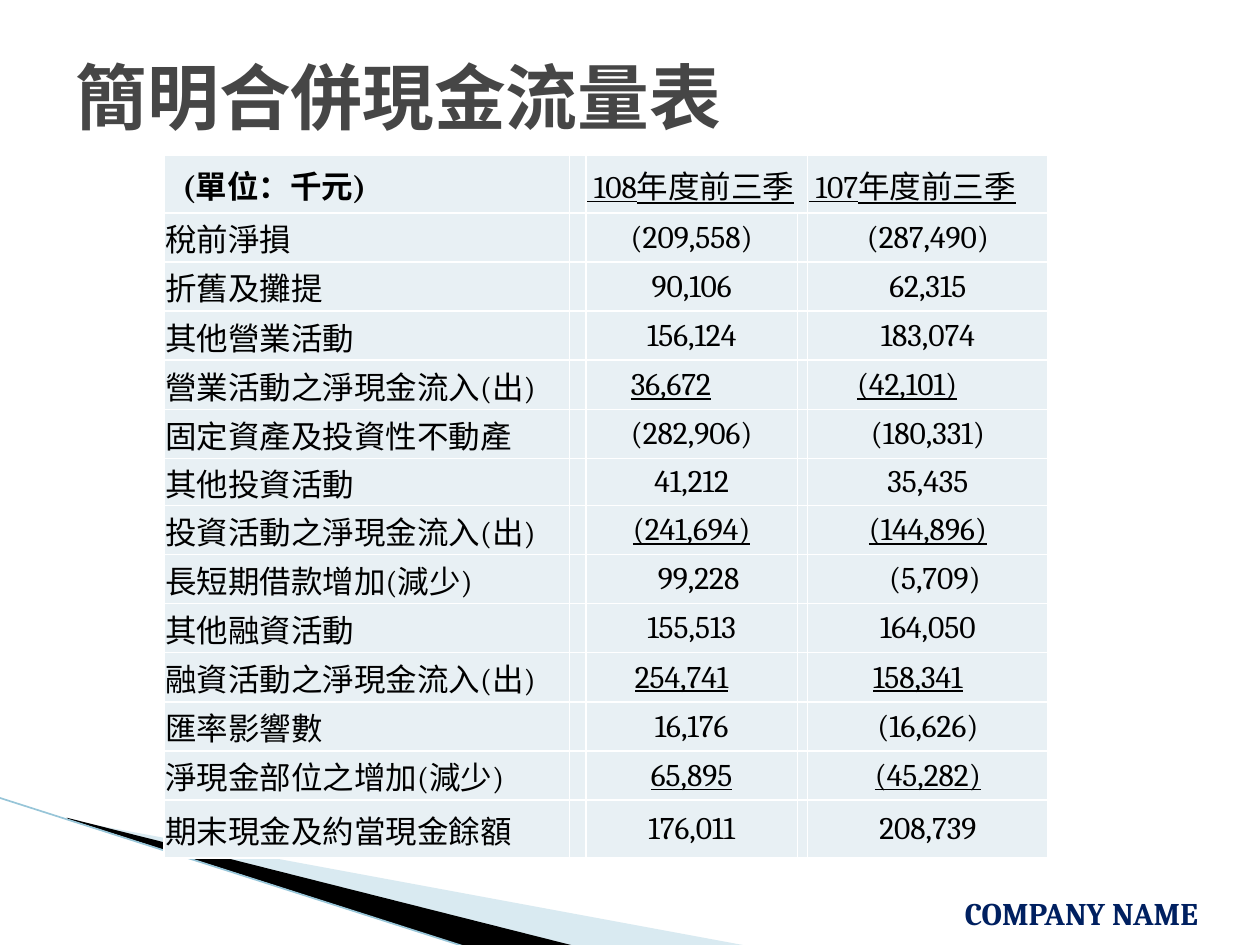
from dataclasses import dataclass
from lxml.etree import SubElement
from pptx import Presentation
from pptx.dml.color import RGBColor as RGB
from pptx.enum.shapes import MSO_CONNECTOR as Link
from pptx.enum.text import MSO_ANCHOR as Anchor, MSO_AUTO_SIZE as Fit, PP_ALIGN as Align
from pptx.oxml.ns import qn
from pptx.util import Inches, Pt


@dataclass(frozen=True)
class Theme:
    serif: str = "Cambria"
    sans: str = "Noto Sans CJK SC"
    big: int = 41
    text: int = 18
    ink: str = "000000"
    head: str = "464646"
    navy: str = "002060"
    cell: str = "E8F0F4"
    pale: str = "A0CBDC"
    edge: str = "97C5D8"


THEME = Theme()
HEADS = "(單位：千元)", " 108年度前三季", " 107年度前三季"
ROWS = [
    ("稅前淨損", "(209,558)", "(287,490)"),
    ("折舊及攤提", "90,106", "62,315"),
    ("其他營業活動", "156,124", "183,074"),
    ("營業活動之淨現金流入(出)", "36,672", "(42,101)"),
    ("固定資產及投資性不動產", "(282,906)", "(180,331)"),
    ("其他投資活動", "41,212", "35,435"),
    ("投資活動之淨現金流入(出)", "(241,694)", "(144,896)"),
    ("長短期借款增加(減少)", "99,228", "(5,709)"),
    ("其他融資活動", "155,513", "164,050"),
    ("融資活動之淨現金流入(出)", "254,741", "158,341"),
    ("匯率影響數", "16,176", "(16,626)"),
    ("淨現金部位之增加(減少)", "65,895", "(45,282)"),
    ("期末現金及約當現金餘額", "176,011", "208,739"),
]
TOTALS = {4, 7, 10, 12}
SHIFTS = {4: -0.33, 8: 0.11, 10: -0.16}
WIDTHS = 3.22, 0.13, 1.68, 0.08, 1.91
HEIGHTS = [0.46] + [0.39] * 5 + [0.31] + [0.39] * 6 + [0.46]


def style(para, size, face, color, bold=False, line=False):
    font = para.font
    font.size, font.name = Pt(size), face
    font.bold, font.underline = bold, line
    font.color.rgb = RGB.from_string(color)


def add_wedge(slide, points, color, alpha=None):
    first, *rest = [(Inches(x), Inches(y)) for x, y in points]
    pen = slide.shapes.build_freeform(*first)
    pen.add_line_segments(rest)
    shape = pen.convert_to_shape()
    shape.shadow.inherit = False
    shape.line.fill.background()
    shape.fill.solid()
    shape.fill.fore_color.rgb = RGB.from_string(color)
    if alpha:
        tone = shape.fill._xPr.find(".//" + qn("a:srgbClr"))
        SubElement(tone, qn("a:alpha"), val=str(alpha * 1000))


def add_edge(slide, start, end):
    ends = [Inches(n) for n in start + end]
    edge = slide.shapes.add_connector(Link.STRAIGHT, *ends)
    edge.line.width = Pt(0.95)
    edge.line.color.rgb = RGB.from_string(THEME.edge)
    SubElement(edge._element.spPr, qn("a:effectLst"))


def fill_cell(cell, text, align=Align.LEFT, bold=False, line=False, shift=0):
    cell.text = text
    cell.vertical_anchor = Anchor.MIDDLE
    para = cell.text_frame.paragraphs[0]
    para.alignment = align
    style(para, THEME.text, THEME.serif, THEME.ink, bold, line)
    cell.margin_left = Inches(0.01 + max(shift, 0))
    cell.margin_right = Inches(0.01 + max(-shift, 0))


def add_flows(slide):
    box = [Inches(n) for n in (1.3, 1.23, sum(WIDTHS), sum(HEIGHTS))]
    grid = slide.shapes.add_table(len(HEIGHTS), len(WIDTHS), *box).table
    grid.first_row = grid.horz_banding = False
    for col, width in zip(grid.columns, WIDTHS):
        col.width = Inches(width)
    for row, height in zip(grid.rows, HEIGHTS):
        row.height = Inches(height)
    for cell in grid.iter_cells():
        cell.fill.solid()
        cell.fill.fore_color.rgb = RGB.from_string(THEME.cell)
        cell.margin_left = cell.margin_right = Inches(0.01)
        cell.margin_top, cell.margin_bottom = Inches(0.01), 0
    grid.cell(0, 2).merge(grid.cell(0, 3))
    fill_cell(grid.cell(0, 0), HEADS[0], bold=True, shift=0.14)
    for col, text in zip((2, 4), HEADS[1:]):
        fill_cell(grid.cell(0, col), text, line=True)
    for row, (name, *sums) in enumerate(ROWS, 1):
        fill_cell(grid.cell(row, 0), name)
        for col, text in zip((2, 4), sums):
            fill_cell(grid.cell(row, col), text, Align.CENTER,
                      line=row in TOTALS, shift=SHIFTS.get(row, 0))


def add_firm(slide, text):
    box = slide.shapes.add_textbox(Inches(7.56), Inches(7.05), Inches(2.37), Inches(0.4))
    frame = box.text_frame
    frame.word_wrap = False
    frame.text = text
    style(frame.paragraphs[0], THEME.text, THEME.serif, THEME.navy, bold=True)


def set_title(slide, text):
    title = slide.shapes.title
    title.left, title.top = Inches(0.5), Inches(0.37)
    title.width, title.height = Inches(9), Inches(1.25)
    frame = title.text_frame
    frame.text = text
    frame.auto_size = Fit.NONE
    frame.vertical_anchor = Anchor.TOP
    para = frame.paragraphs[0]
    para.alignment = Align.LEFT
    style(para, THEME.big, THEME.sans, THEME.head, bold=True)


def main():
    deck = Presentation()
    deck.slide_width, deck.slide_height = Inches(10), Inches(7.5)
    slide = deck.slides.add_slide(deck.slide_layouts[5])
    add_wedge(slide, [(0.55, 6.51), (5.95, 7.51), (4.56, 7.51), (0.55, 6.5)], THEME.pale, 40)
    add_wedge(slide, [(0.53, 6.49), (4.57, 7.51), (3.72, 7.52), (0.54, 6.5)], THEME.ink)
    add_edge(slide, (-0.01, 6.33), (3.71, 7.52))
    add_flows(slide)
    add_firm(slide, "COMPANY NAME")
    set_title(slide, "簡明合併現金流量表")
    deck.save("out.pptx")


if __name__ == "__main__":
    main()
